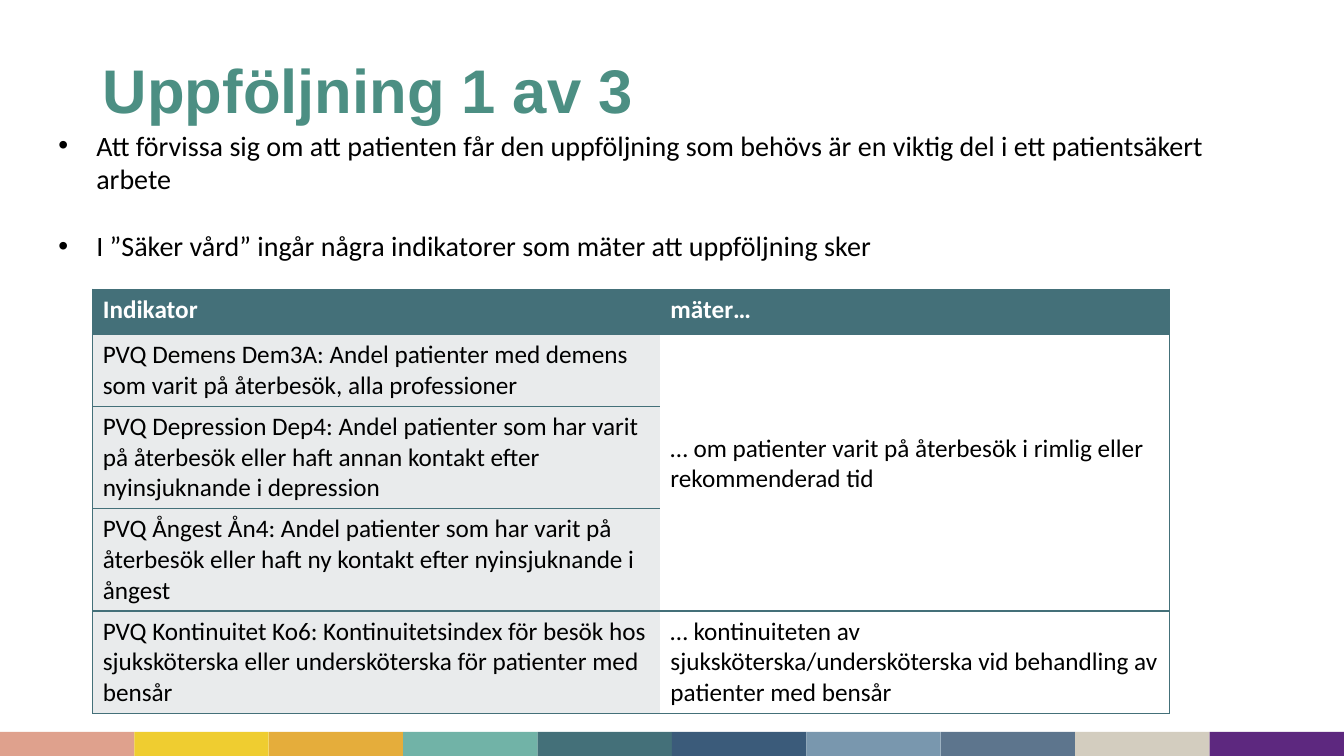
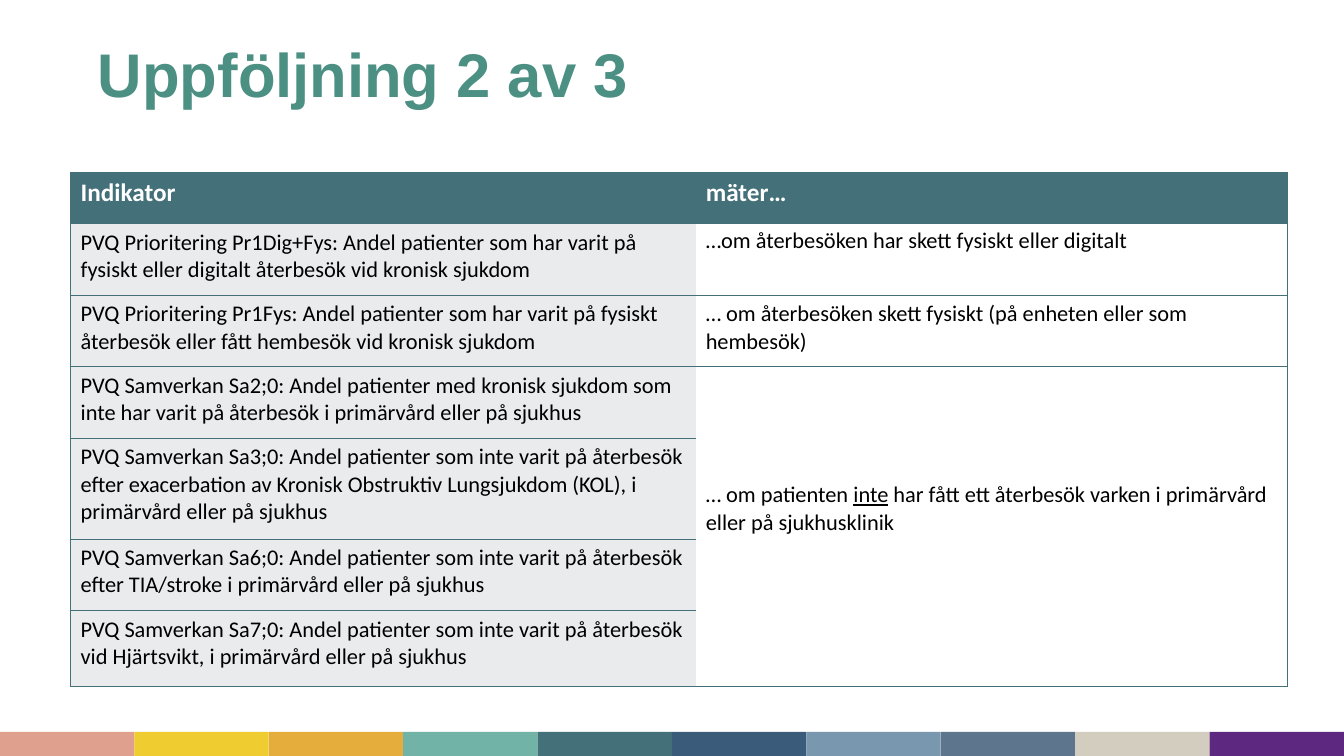
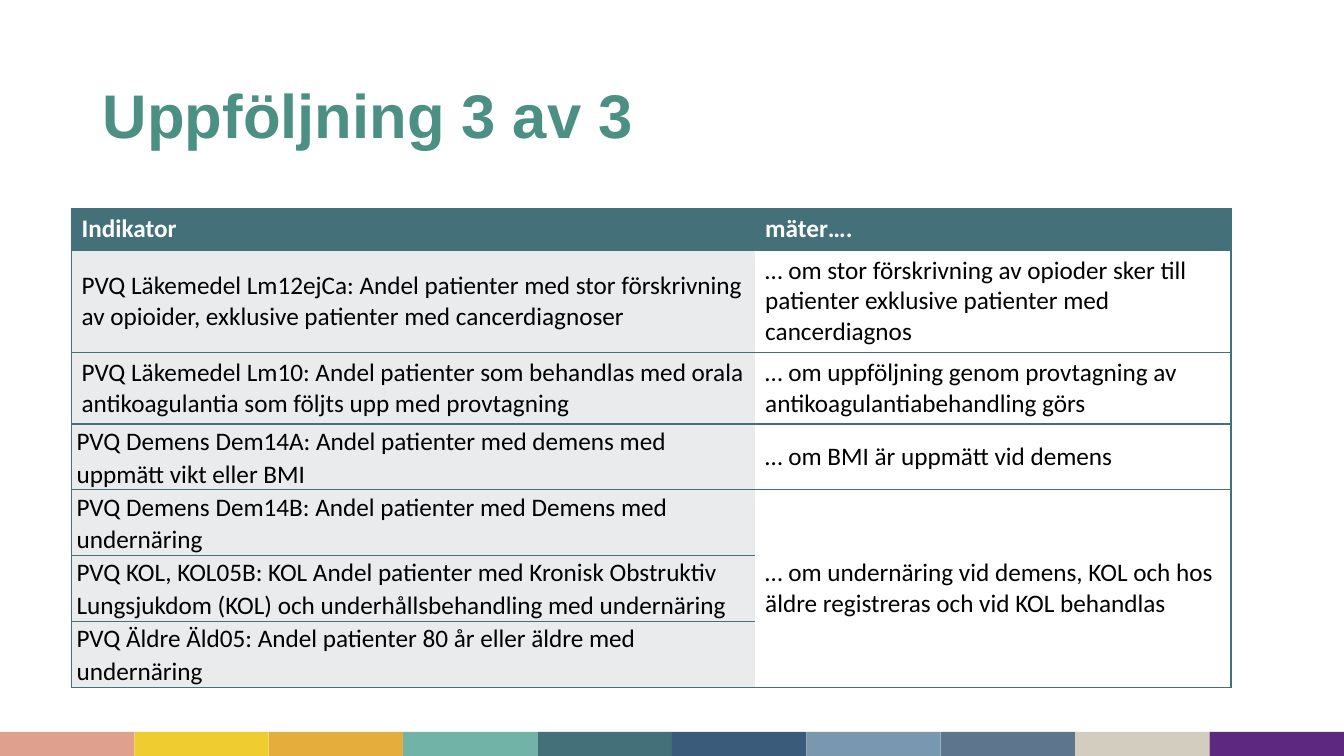
from lxml import etree
from pptx import Presentation
from pptx.dml.color import RGBColor
from pptx.enum.shapes import MSO_SHAPE
from pptx.enum.text import MSO_ANCHOR, MSO_AUTO_SIZE, PP_ALIGN
from pptx.oxml.ns import qn
from pptx.util import Inches, Pt

RECTANGLE = MSO_SHAPE.RECTANGLE
TOP, MIDDLE = MSO_ANCHOR.TOP, MSO_ANCHOR.MIDDLE
LEFT = PP_ALIGN.LEFT
NO_AUTOFIT = MSO_AUTO_SIZE.NONE

TITLE_GREEN = RGBColor(0x4C, 0x8F, 0x83)
TEAL = RGBColor(0x44, 0x70, 0x79)
PALE_GREY = RGBColor(0xE9, 0xEB, 0xEC)
WHITE = RGBColor(0xFF, 0xFF, 0xFF)
BLACK = RGBColor(0x00, 0x00, 0x00)
BAND_COLOURS = [
    RGBColor(0xDF, 0xA1, 0x8D), RGBColor(0xEF, 0xCD, 0x30),
    RGBColor(0xE5, 0xAD, 0x3B), RGBColor(0x71, 0xB3, 0xA7),
    TEAL, RGBColor(0x3B, 0x5B, 0x7A),
    RGBColor(0x79, 0x97, 0xAE), RGBColor(0x5D, 0x75, 0x8D),
    RGBColor(0xD3, 0xCD, 0xBF), RGBColor(0x5D, 0x28, 0x7F),
]

SLIDE_WIDTH, SLIDE_HEIGHT = 13.33, 7.5
BAND_TOP, BAND_HEIGHT = 7.26, 0.25
TITLE_SIZE = (11.5, 1.45)
BULLETS_AT = (0.48, 1.22, 12.3, 1.78)
TITLE_AND_BODY, TITLE_ONLY = 1, 5
TIGHT = {"margins": (0.05, 0, 0.05, 0), "line_spacing": 1.07}

SLIDES = [
    {
        "title": "Uppföljning 1 av 3",
        "title_at": (0.92, 0.16),
        "bullets": [
            "Att förvissa sig om att patienten får den uppföljning som behövs "
            "är en viktig del i ett patientsäkert arbete",
            "I ”Säker vård” ingår några indikatorer som mäter att uppföljning sker",
        ],
        "table_at": (0.92, 2.87),
        "columns": [5.63, 5.05],
        "heights": [0.45, 0.71, 1.01, 1.01, 1.01],
        "size": 18,
        "anchor": TOP,
        "rows": [
            ("Indikator", "mäter…"),
            ("PVQ Demens Dem3A: Andel patienter med demens som varit på återbesök, "
             "alla professioner",
             "… om patienter varit på återbesök i rimlig eller rekommenderad tid"),
            ("PVQ Depression Dep4: Andel patienter som har varit på återbesök eller "
             "haft annan kontakt efter nyinsjuknande i depression", None),
            ("PVQ Ångest Ån4: Andel patienter som har varit på återbesök eller haft "
             "ny kontakt efter nyinsjuknande i ångest", None),
            ("PVQ Kontinuitet Ko6: Kontinuitetsindex för besök hos sjuksköterska "
             "eller undersköterska för patienter med bensår",
             "… kontinuiteten av sjuksköterska/undersköterska vid behandling av "
             "patienter med bensår"),
        ],
        "merged": (1, 3),
        "cell_formats": {(1, 1): {"anchor": MIDDLE, "margins": (0.1, 0.05, 0.1, 0.23)}},
    },
    {
        "title": "Uppföljning 2 av 3",
        "title_at": (0.87, 0),
        "bullets": [],
        "table_at": (0.7, 1.71),
        "columns": [6.2, 5.87],
        "heights": [0.51, 0.71, 0.71, 0.71, 1, 0.71, 0.75],
        "size": 16,
        "anchor": TOP,
        "rows": [
            ("Indikator", "mäter…"),
            ("PVQ Prioritering Pr1Dig+Fys: Andel patienter som har varit på fysiskt "
             "eller digitalt återbesök vid kronisk sjukdom",
             "…om återbesöken har skett fysiskt eller digitalt"),
            ("PVQ Prioritering Pr1Fys: Andel patienter som har varit på fysiskt "
             "återbesök eller fått hembesök vid kronisk sjukdom",
             "… om återbesöken skett fysiskt (på enheten eller som hembesök)"),
            ("PVQ Samverkan Sa2;0: Andel patienter med kronisk sjukdom som inte har "
             "varit på återbesök i primärvård eller på sjukhus",
             "… om patienten inte har fått ett återbesök varken i primärvård eller "
             "på sjukhusklinik"),
            ("PVQ Samverkan Sa3;0: Andel patienter som inte varit på återbesök efter "
             "exacerbation av Kronisk Obstruktiv Lungsjukdom (KOL), i primärvård "
             "eller på sjukhus", None),
            ("PVQ Samverkan Sa6;0: Andel patienter som inte varit på återbesök efter "
             "TIA/stroke i primärvård eller på sjukhus", None),
            ("PVQ Samverkan Sa7;0: Andel patienter som inte varit på återbesök vid "
             "Hjärtsvikt, i primärvård eller på sjukhus", None),
        ],
        "merged": (3, 6),
        "cell_formats": {
            (1, 1): {"line_spacing": 0.9},
            (3, 1): {"anchor": MIDDLE, "margins": (0.1, 0.05, 0.1, 0.4),
                     "underlined": "inte"},
        },
    },
    {
        "title": "Uppföljning 3 av 3",
        "title_at": (0.92, 0.4),
        "bullets": [],
        "table_at": (0.71, 2.07),
        "columns": [6.78, 4.72],
        "heights": [0.41, 1.01, 0.71, 0.65, 0.65, 0.65, 0.65],
        "size": 18,
        "anchor": MIDDLE,
        "rows": [
            ("Indikator", "mäter…."),
            ("PVQ Läkemedel Lm12ejCa: Andel patienter med stor förskrivning av "
             "opioider, exklusive patienter med cancerdiagnoser",
             "… om stor förskrivning av opioder sker till patienter exklusive "
             "patienter med cancerdiagnos"),
            ("PVQ Läkemedel Lm10: Andel patienter som behandlas med orala "
             "antikoagulantia som följts upp med provtagning",
             "… om uppföljning genom provtagning av antikoagulantiabehandling görs"),
            ("PVQ Demens Dem14A: Andel patienter med demens med uppmätt vikt eller BMI",
             "… om BMI är uppmätt vid demens"),
            ("PVQ Demens Dem14B: Andel patienter med Demens med undernäring",
             "… om undernäring vid demens, KOL och hos äldre registreras och vid KOL "
             "behandlas"),
            ("PVQ KOL, KOL05B: KOL Andel patienter med Kronisk Obstruktiv Lungsjukdom "
             "(KOL) och underhållsbehandling med undernäring", None),
            ("PVQ Äldre Äld05: Andel patienter 80 år eller äldre med undernäring", None),
        ],
        "merged": (4, 6),
        "cell_formats": {(row, 0): TIGHT for row in range(3, 7)},
    },
]


def write(frame, paragraphs, *, size, colour=BLACK, font="Calibri", bold=False,
          underlined=None, line_spacing=1.0, gap=0):
    for index, text in enumerate(paragraphs):
        paragraph = frame.add_paragraph() if index else frame.paragraphs[0]
        paragraph.alignment = LEFT
        paragraph.line_spacing = line_spacing
        paragraph.space_before = Pt(gap if index else 0)
        pieces = text.partition(underlined) if underlined else (text,)
        for piece in pieces:
            run = paragraph.add_run()
            run.text = piece
            run.font.name = font
            run.font.size = Pt(size)
            run.font.bold = bold
            run.font.color.rgb = colour
            if piece == underlined:
                run.font.underline = True


def place(part, left, top, width, height):
    part.left, part.top = Inches(left), Inches(top)
    part.width, part.height = Inches(width), Inches(height)


def add_band(slide, master):
    master_tree = master.element.find(".//" + qn("p:spTree"))
    width = SLIDE_WIDTH / len(BAND_COLOURS)
    for index, colour in enumerate(BAND_COLOURS):
        block = slide.shapes.add_shape(
            RECTANGLE, Inches(index * width), Inches(BAND_TOP),
            Inches(width), Inches(BAND_HEIGHT))
        block.shadow.inherit = False
        block.fill.solid()
        block.fill.fore_color.rgb = colour
        block.line.fill.background()
        master_tree.append(block.element)


def set_borders(cell, visible):
    properties = cell._tc.get_or_add_tcPr()
    for side in "LRTB":
        line = etree.SubElement(properties, qn(f"a:ln{side}"), w=str(Pt(1)))
        if side in visible:
            fill = etree.SubElement(line, qn("a:solidFill"))
            etree.SubElement(fill, qn("a:srgbClr"), val=str(TEAL))
        else:
            etree.SubElement(line, qn("a:noFill"))


def format_cell(cell, text, fill, anchor, margins=(0.1, 0.05, 0.1, 0.05), **text_format):
    cell.fill.solid()
    cell.fill.fore_color.rgb = fill
    if text is None:
        return
    cell.vertical_anchor = anchor
    (cell.margin_left, cell.margin_top,
     cell.margin_right, cell.margin_bottom) = map(Inches, margins)
    write(cell.text_frame, [text], **text_format)


def add_indicators(slide, content):
    rows, columns, heights = content["rows"], content["columns"], content["heights"]
    left, top = content["table_at"]
    table = slide.shapes.add_table(
        len(rows), len(columns), Inches(left), Inches(top),
        Inches(sum(columns)), Inches(sum(heights))).table
    for column, width in zip(table.columns, columns):
        column.width = Inches(width)
    for row, height in zip(table.rows, heights):
        row.height = Inches(height)
    first, last = content["merged"]
    table.cell(first, 1).merge(table.cell(last, 1))

    for r, row in enumerate(rows):
        for c, text in enumerate(row):
            cell = table.cell(r, c)
            sides = "R" if c else "L"
            if text is not None:
                sides += "TB"
            elif r == last:
                sides += "B"
            set_borders(cell, sides)
            if r == 0:
                style = {"fill": TEAL, "size": 18, "colour": WHITE, "bold": True}
            else:
                style = {"fill": WHITE if c else PALE_GREY, "size": content["size"]}
            style["anchor"] = content["anchor"]
            style.update(content["cell_formats"].get((r, c), {}))
            format_cell(cell, text, **style)


def build_slide(deck, content):
    layout = TITLE_AND_BODY if content["bullets"] else TITLE_ONLY
    slide = deck.slides.add_slide(deck.slide_layouts[layout])
    title = slide.shapes.title
    place(title, *content["title_at"], *TITLE_SIZE)
    title.text_frame.auto_size = NO_AUTOFIT
    title.text_frame.vertical_anchor = MIDDLE
    write(title.text_frame, [content["title"]], size=44, colour=TITLE_GREEN,
          font="Arial", bold=True)
    if content["bullets"]:
        bullets = slide.placeholders[1]
        place(bullets, *BULLETS_AT)
        bullets.text_frame.auto_size = NO_AUTOFIT
        write(bullets.text_frame, content["bullets"], size=20, gap=24)
    add_indicators(slide, content)
    return slide


def main():
    deck = Presentation()
    deck.slide_width, deck.slide_height = Inches(SLIDE_WIDTH), Inches(SLIDE_HEIGHT)
    slides = [build_slide(deck, content) for content in SLIDES]
    add_band(slides[0], deck.slide_master)
    deck.save("out.pptx")


if __name__ == "__main__":
    main()
